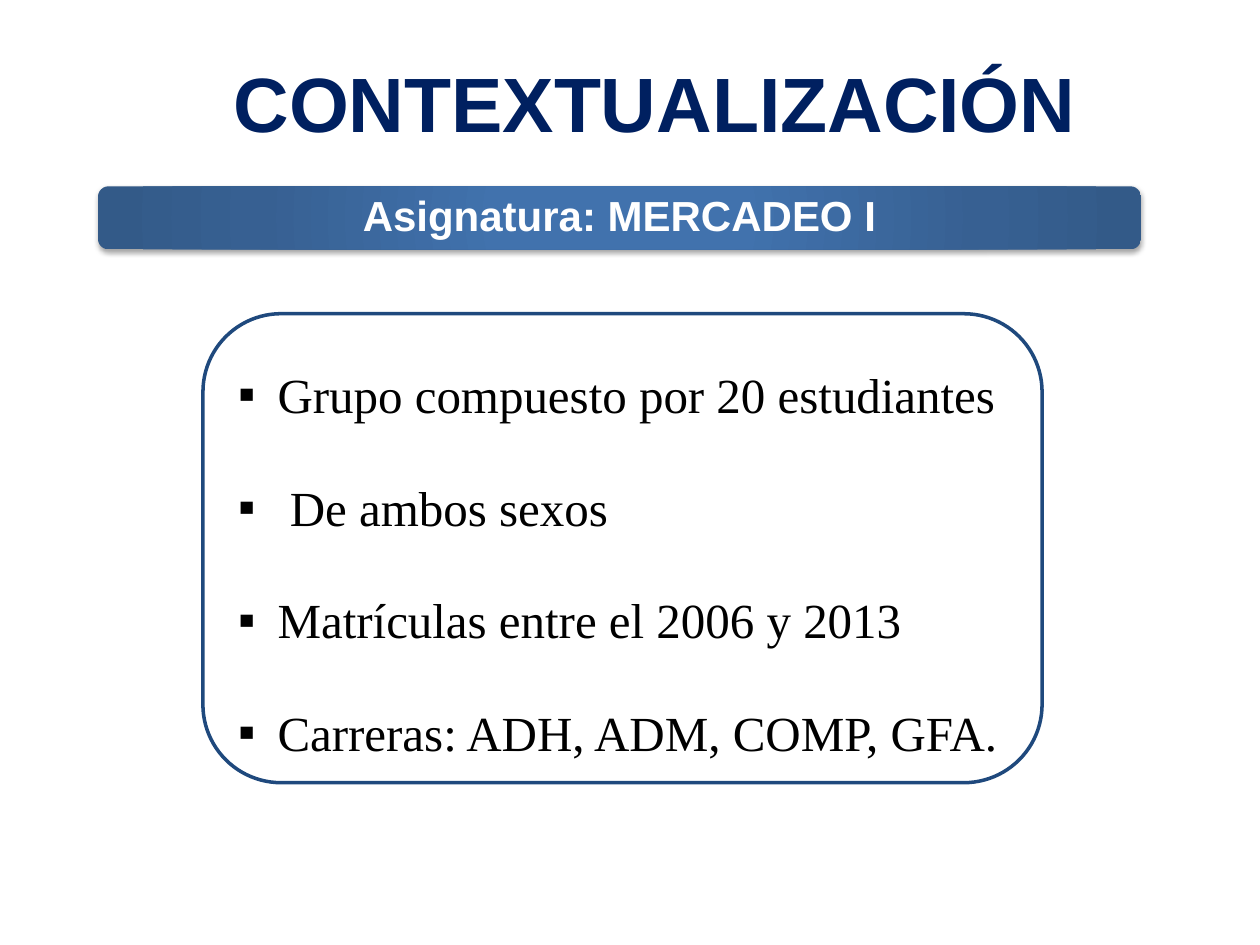
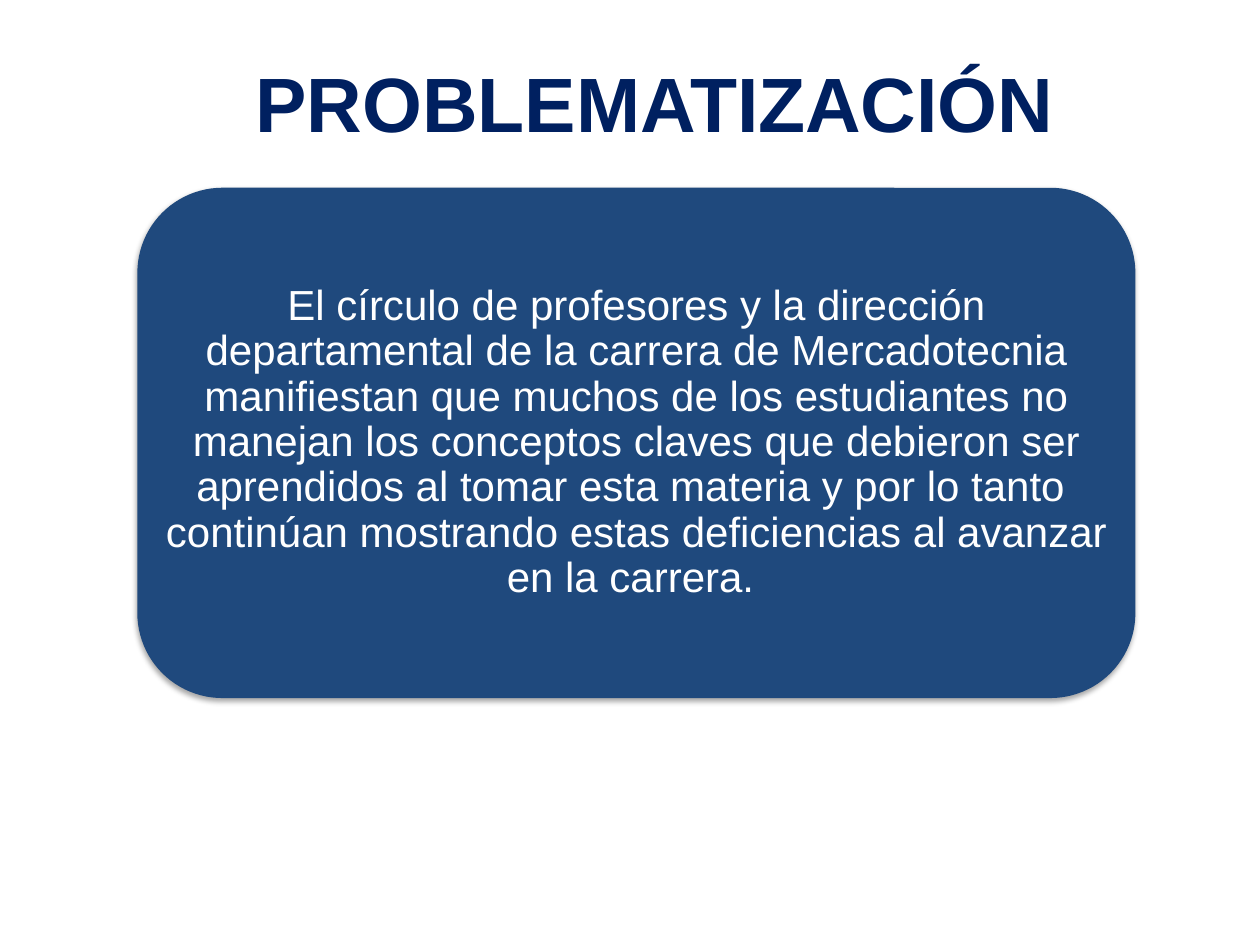
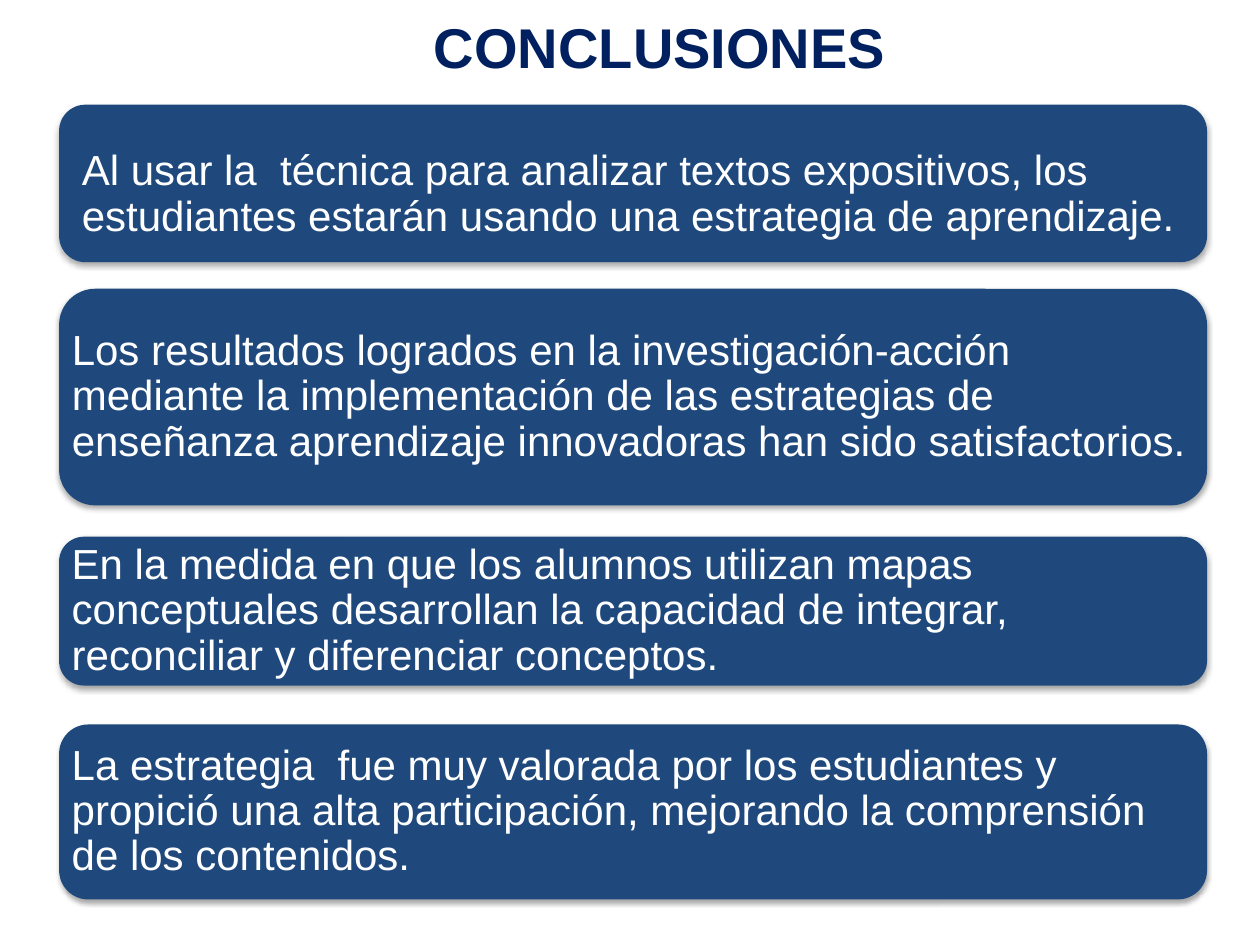
"""Build three slides on context, problem and conclusions of a marketing course."""
from dataclasses import dataclass

from lxml import etree
from pptx import Presentation
from pptx.dml.color import RGBColor
from pptx.enum.shapes import MSO_SHAPE
from pptx.enum.text import MSO_ANCHOR, PP_ALIGN
from pptx.oxml import parse_xml
from pptx.oxml.ns import qn
from pptx.util import Pt

ROUNDED = MSO_SHAPE.ROUNDED_RECTANGLE
MIDDLE = MSO_ANCHOR.MIDDLE
LEFT, CENTER, JUSTIFY = PP_ALIGN.LEFT, PP_ALIGN.CENTER, PP_ALIGN.JUSTIFY
DRAWING = 'xmlns:a="http://schemas.openxmlformats.org/drawingml/2006/main"'


@dataclass(frozen=True)
class Theme:
    title: str = "002060"
    title_outline: str = "5E457C"
    panel: str = "1F497D"
    white: str = "FFFFFF"
    black: str = "000000"
    banner_stops: tuple = ((0, "4172AD"), (23, "4172AD"), (69, "376092"), (97, "335A88"))
    sans: str = "Arial"
    serif: str = "Times New Roman"
    title_size: int = 44
    small_title_size: int = 32
    body_size: int = 24
    list_size: int = 28


THEME = Theme()


def format_paragraph(paragraph, size, color, font=THEME.sans, bold=False,
                     alignment=LEFT, line_spacing=None, space_after=None):
    paragraph.alignment = alignment
    paragraph.line_spacing = line_spacing
    if space_after is not None:
        paragraph.space_after = Pt(space_after)
    for run in paragraph.runs:
        run.font.name = font
        run.font.size = Pt(size)
        run.font.bold = bold
        run.font.color.rgb = RGBColor.from_string(color)


def add_title(slide, text, left=50.4, top=28, width=648, height=90, size=THEME.title_size):
    text_box = slide.shapes.add_textbox(Pt(left), Pt(top), Pt(width), Pt(height))
    text_frame = text_box.text_frame
    text_frame.word_wrap = True
    text_frame.text = text
    paragraph = text_frame.paragraphs[0]
    format_paragraph(paragraph, size, THEME.title, bold=True, alignment=CENTER)
    outline = parse_xml(
        f'<a:ln {DRAWING} w="{Pt(0.71)}"><a:solidFill>'
        f'<a:srgbClr val="{THEME.title_outline}"/></a:solidFill></a:ln>')
    paragraph.runs[0].font._element.insert(0, outline)


def add_rounded_box(slide, left, top, width, height, fill):
    shape = slide.shapes.add_shape(ROUNDED, Pt(left), Pt(top), Pt(width), Pt(height))
    shape.shadow.inherit = False
    shape.fill.solid()
    shape.fill.fore_color.rgb = RGBColor.from_string(fill)
    shape.line.fill.background()
    shape.text_frame.word_wrap = True
    shape.text_frame.vertical_anchor = MIDDLE
    shape.text_frame.margin_top = shape.text_frame.margin_bottom = 0
    return shape


def add_shadow(shape):
    effects = shape._element.spPr.find(qn("a:effectLst"))
    effects.append(parse_xml(
        f'<a:outerShdw {DRAWING} blurRad="{Pt(3.1)}" dist="{Pt(1.8)}" dir="5400000" '
        f'rotWithShape="0"><a:srgbClr val="{THEME.black}"><a:alpha val="35000"/>'
        '</a:srgbClr></a:outerShdw>'))


def apply_radial_gradient(shape, stops):
    stop_list = "".join(
        f'<a:gs pos="{position * 1000}"><a:srgbClr val="{color}"/></a:gs>'
        for position, color in stops)
    gradient = parse_xml(
        f'<a:gradFill {DRAWING} rotWithShape="1"><a:gsLst>{stop_list}</a:gsLst>'
        '<a:path path="circle"><a:fillToRect l="50000" t="50000" r="50000" b="50000"/>'
        '</a:path></a:gradFill>')
    properties = shape._element.spPr
    properties.replace(properties.find(qn("a:solidFill")), gradient)


def add_panel(slide, left, top, width, height, text, alignment=LEFT,
              inset=7.2, extra_top=0, bold=False):
    shape = add_rounded_box(slide, left, top, width, height, THEME.panel)
    add_shadow(shape)
    corner_inset = 0.29 * height / 6
    text_frame = shape.text_frame
    text_frame.margin_left = text_frame.margin_right = Pt(max(0, inset - corner_inset))
    text_frame.margin_top = Pt(extra_top)
    text_frame.text = text
    format_paragraph(text_frame.paragraphs[0], THEME.body_size, THEME.white, bold=bold,
                     alignment=alignment, line_spacing=0.9, space_after=8.4)
    return shape


def add_bullet(paragraph, symbol, indent):
    properties = paragraph._p.get_or_add_pPr()
    properties.set("marL", str(Pt(indent)))
    properties.set("indent", str(Pt(-indent)))
    font = etree.SubElement(properties, qn("a:buFont"))
    font.set("typeface", THEME.sans)
    etree.SubElement(properties, qn("a:buChar")).set("char", symbol)


def add_bullet_box(slide, left, top, width, height, items):
    shape = add_rounded_box(slide, left, top, width, height, THEME.white)
    shape.line.color.rgb = RGBColor.from_string(THEME.panel)
    shape.line.width = Pt(2)
    shape.text_frame.text = "\n".join(items)
    for paragraph in shape.text_frame.paragraphs:
        format_paragraph(paragraph, THEME.list_size, THEME.black, font=THEME.serif,
                         alignment=JUSTIFY, line_spacing=1.5, space_after=10)
        paragraph.space_before = Pt(3.9)
        add_bullet(paragraph, "▪", 22.5)


def build_context(slide):
    add_title(slide, "CONTEXTUALIZACIÓN")
    banner = add_panel(slide, 56, 106.5, 596, 36, "Asignatura: MERCADEO I",
                       alignment=CENTER, bold=True)
    apply_radial_gradient(banner, THEME.banner_stops)
    add_bullet_box(slide, 116, 179.3, 479.5, 268, [
        "Grupo compuesto por 20 estudiantes",
        " De ambos sexos",
        "Matrículas entre el 2006 y 2013",
        "Carreras: ADH, ADM, COMP, GFA.",
    ])


def build_problem(slide):
    add_panel(
        slide, 78.5, 107.3, 570.3, 291.6,
        "El círculo de profesores y la dirección departamental de la carrera de "
        "Mercadotecnia manifiestan que muchos de los estudiantes no manejan los "
        "conceptos claves que debieron ser aprendidos al tomar esta materia y por lo "
        "tanto  continúan mostrando estas deficiencias al avanzar en la carrera. ",
        alignment=CENTER)
    add_title(slide, "PROBLEMATIZACIÓN")


def build_conclusions(slide):
    add_title(slide, "CONCLUSIONES", 34, 3.6, 686, 73.5, THEME.small_title_size)
    conclusions = [
        (59.8, 90, 13, 13,
         "Al usar la  técnica para analizar textos expositivos, los estudiantes estarán "
         "usando una estrategia de aprendizaje."),
        (165, 123.8, 7.2, 0,
         "Los resultados logrados en la investigación-acción mediante la implementación "
         "de las estrategias de enseñanza aprendizaje innovadoras han sido satisfactorios."),
        (306.7, 85, 7.2, 0,
         "En la medida en que los alumnos utilizan mapas conceptuales desarrollan la "
         "capacidad de integrar, reconciliar y diferenciar conceptos."),
        (414, 100, 7.2, 0,
         "La estrategia  fue muy valorada por los estudiantes y propició una alta "
         "participación, mejorando la comprensión de los contenidos."),
    ]
    for top, height, inset, extra_top, text in conclusions:
        add_panel(slide, 33.8, top, 656, height, text, inset=inset, extra_top=extra_top)


def main():
    presentation = Presentation()
    presentation.slide_width = Pt(720)
    presentation.slide_height = Pt(540)
    blank_layout = presentation.slide_layouts[6]
    for build in (build_context, build_problem, build_conclusions):
        build(presentation.slides.add_slide(blank_layout))
    presentation.save("out.pptx")


if __name__ == "__main__":
    main()
